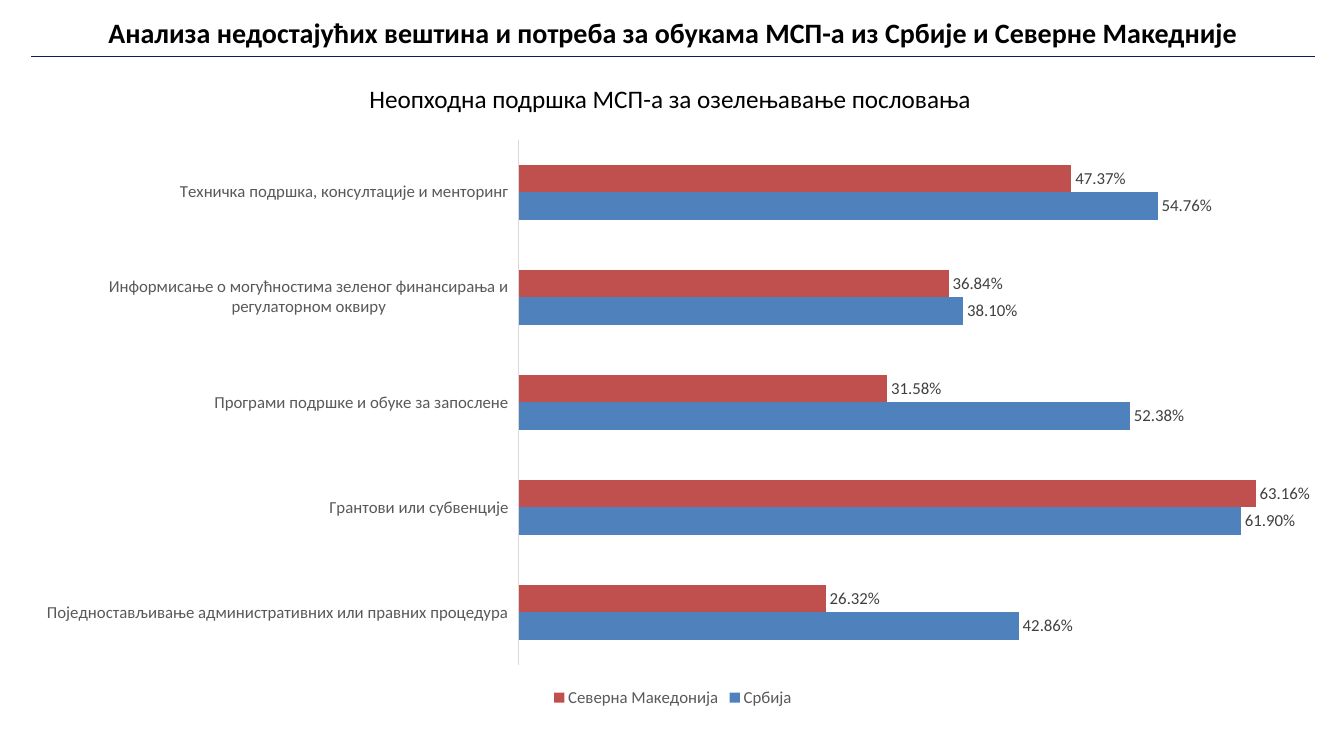
from dataclasses import dataclass

from lxml import etree
from pptx import Presentation
from pptx.chart.data import CategoryChartData
from pptx.dml.color import RGBColor
from pptx.enum.chart import XL_CHART_TYPE, XL_LABEL_POSITION, XL_LEGEND_POSITION, XL_TICK_LABEL_POSITION, XL_TICK_MARK
from pptx.enum.text import MSO_ANCHOR, PP_ALIGN
from pptx.oxml import parse_xml
from pptx.oxml.ns import nsdecls, qn
from pptx.util import Inches, Pt

BAR_CLUSTERED = XL_CHART_TYPE.BAR_CLUSTERED
OUTSIDE_END = XL_LABEL_POSITION.OUTSIDE_END
LEGEND_BOTTOM = XL_LEGEND_POSITION.BOTTOM
LABELS_LOW = XL_TICK_LABEL_POSITION.LOW
NO_TICKS = XL_TICK_MARK.NONE
MIDDLE = MSO_ANCHOR.MIDDLE
CENTER = PP_ALIGN.CENTER


@dataclass(frozen=True)
class Theme:
    font: str = "Calibri"
    title_size: int = 20
    subtitle_size: int = 18
    chart_size: int = 12
    text: str = "000000"
    axis_text: str = "595959"
    label_text: str = "404040"
    axis_line: str = "D9D9D9"
    rule: str = "002060"
    blank_border: str = "FFFFFF"


@dataclass(frozen=True)
class Series:
    name: str
    color: str
    values: tuple[float, ...]


@dataclass(frozen=True)
class Border:
    tag: str
    color: str


THEME = Theme()
LEFT, WIDTH = 0.3, 12.75
PERCENT = "0.00%"
TITLE = "Анализа недостајућих вештина и потреба за обукама МСП-а из Србије и Северне Македније"
SUBTITLE = "Неопходна подршка МСП-а за озелењавање пословања "
CATEGORIES = (
    "Поједностављивање административних или правних процедура",
    "Грантови или субвенције",
    "Програми подршке и обуке за запослене",
    "Информисање о могућностима зеленог финансирања и регулаторном оквиру",
    "Техничка подршка, консултације и менторинг",
)
SERIES = (
    Series("Србија", "4F81BD", (0.4286, 0.619, 0.5238, 0.381, 0.5476)),
    Series("Северна Македонија", "C0504D", (0.2632, 0.6316, 0.3158, 0.3684, 0.4737)),
)
TITLE_BORDERS = (
    Border("lnL", THEME.blank_border),
    Border("lnR", THEME.blank_border),
    Border("lnT", THEME.blank_border),
    Border("lnB", THEME.rule),
)


def style_font(font, size: int, color: str, bold: bool = False) -> None:
    font.name = THEME.font
    font.size = Pt(size)
    font.bold = bold
    font.color.rgb = RGBColor.from_string(color)


def write_text(frame, text: str, *, size: int, color: str = THEME.text,
               bold: bool = False, align=CENTER) -> None:
    frame.word_wrap = True
    paragraph = frame.paragraphs[0]
    paragraph.alignment = align
    run = paragraph.add_run()
    run.text = text
    style_font(run.font, size, color, bold)


def set_borders(cell, borders: tuple[Border, ...]) -> None:
    properties = cell._tc.get_or_add_tcPr()
    for index, border in enumerate(borders):
        properties.insert(index, parse_xml(
            f'<a:{border.tag} {nsdecls("a")} w="12700"><a:solidFill>'
            f'<a:srgbClr val="{border.color}"/></a:solidFill></a:{border.tag}>'))


def add_title(slide) -> None:
    table = slide.shapes.add_table(
        1, 1, Inches(LEFT), Inches(0.12), Inches(WIDTH), Inches(0.43)).table
    table.first_row = False
    table.horz_banding = False
    cell = table.cell(0, 0)
    cell.fill.background()
    cell.vertical_anchor = MIDDLE
    write_text(cell.text_frame, TITLE, size=THEME.title_size, bold=True)
    set_borders(cell, TITLE_BORDERS)


def add_subtitle(slide) -> None:
    box = slide.shapes.add_textbox(Inches(LEFT), Inches(0.78), Inches(WIDTH), Inches(0.4))
    write_text(box.text_frame, SUBTITLE, size=THEME.subtitle_size)


def place_plot(chart, **fractions: float) -> None:
    """Fix the inner plot area as fractions (x, y, w, h) of the chart frame."""
    plot_area = chart._chartSpace.chart.plotArea
    for layout in plot_area.findall(qn("c:layout")):
        plot_area.remove(layout)
    layout = etree.Element(qn("c:layout"))
    manual = etree.SubElement(layout, qn("c:manualLayout"))
    settings = {"layoutTarget": "inner", "xMode": "edge", "yMode": "edge", **fractions}
    for name, value in settings.items():
        etree.SubElement(manual, qn(f"c:{name}")).set("val", str(value))
    plot_area.insert(0, layout)


def style_axes(chart) -> None:
    category_axis = chart.category_axis
    category_axis.major_tick_mark = NO_TICKS
    category_axis.minor_tick_mark = NO_TICKS
    category_axis.tick_label_position = LABELS_LOW
    category_axis.has_major_gridlines = False
    category_axis.format.line.color.rgb = RGBColor.from_string(THEME.axis_line)
    category_axis.format.line.width = Pt(0.75)
    style_font(category_axis.tick_labels.font, THEME.chart_size, THEME.axis_text)
    value_axis = chart.value_axis
    value_axis.minimum_scale = 0
    value_axis.maximum_scale = 0.65
    value_axis.has_major_gridlines = False
    value_axis.visible = False


def style_series(series, color: str) -> None:
    series.invert_if_negative = False
    series.format.fill.solid()
    series.format.fill.fore_color.rgb = RGBColor.from_string(color)
    labels = series.data_labels
    labels.show_value = True
    labels.position = OUTSIDE_END
    labels.number_format = PERCENT
    labels.number_format_is_linked = False
    style_font(labels.font, THEME.chart_size, THEME.label_text)


def add_support_chart(slide) -> None:
    data = CategoryChartData(number_format=PERCENT)
    data.categories = CATEGORIES
    for series in SERIES:
        data.add_series(series.name, series.values)
    chart = slide.shapes.add_chart(
        BAR_CLUSTERED, Inches(LEFT), Inches(1.27), Inches(WIDTH), Inches(5.79), data).chart
    chart.has_title = False
    style_font(chart.font, THEME.chart_size, THEME.text)
    chart.has_legend = True
    chart.legend.position = LEGEND_BOTTOM
    chart.legend.include_in_layout = False
    style_font(chart.legend.font, THEME.chart_size, THEME.axis_text)
    plot = chart.plots[0]
    plot.gap_width = 182
    plot.overlap = 0
    plot.vary_by_categories = False
    style_axes(chart)
    for drawn, series in zip(plot.series, SERIES):
        style_series(drawn, series.color)
    place_plot(chart, x=0.38, y=0.02, w=0.59, h=0.9)


def main() -> None:
    presentation = Presentation()
    presentation.slide_width = Inches(13.33)
    presentation.slide_height = Inches(7.5)
    slide = presentation.slides.add_slide(presentation.slide_layouts[6])
    add_title(slide)
    add_support_chart(slide)
    add_subtitle(slide)
    presentation.save("out.pptx")


if __name__ == "__main__":
    main()
